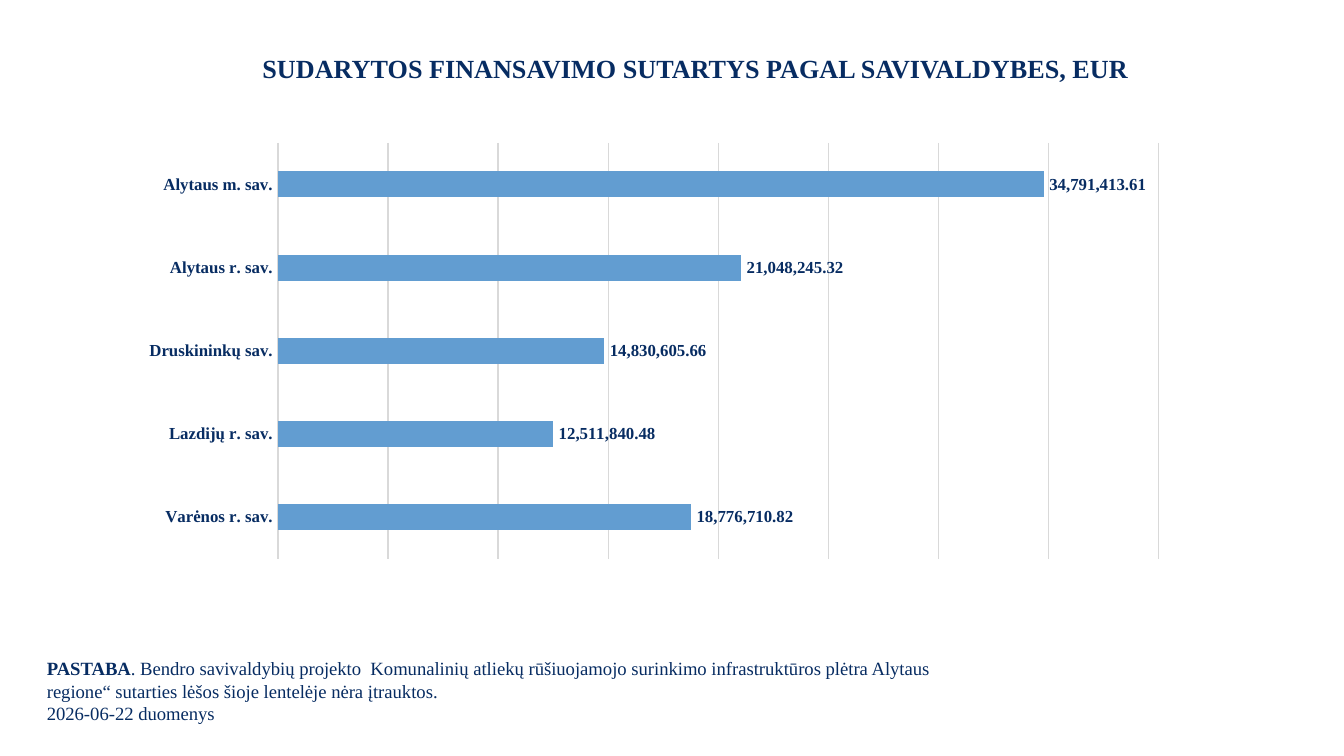
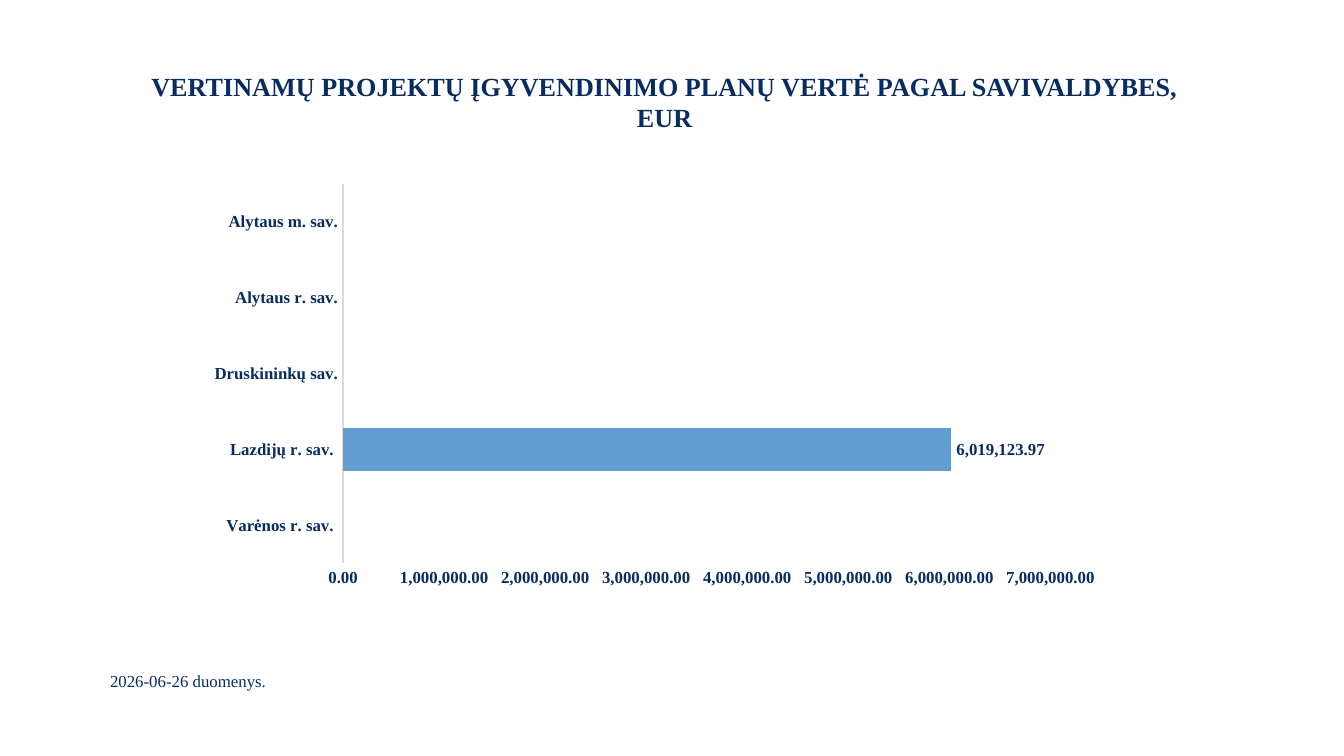
from dataclasses import dataclass
from typing import Optional

from lxml import etree
from pptx import Presentation
from pptx import util as u
from pptx.chart import data as cd
from pptx.dml.color import RGBColor
from pptx.enum import chart as ch
from pptx.enum import text as tx
from pptx.oxml.ns import qn


@dataclass(frozen=True)
class Theme:
    ink: RGBColor = RGBColor(0x07, 0x2C, 0x62)
    bar: RGBColor = RGBColor(0x62, 0x9D, 0xD1)
    grid: RGBColor = RGBColor(0xD9, 0xD9, 0xD9)
    face: str = "Times New Roman"
    head: int = 14
    note: int = 10
    small: int = 9
    line: float = 0.75
    form: str = "#,##0.00"


@dataclass(frozen=True)
class Box:
    left: float
    top: float
    width: float
    height: float

    def spots(self) -> tuple:
        return tuple(u.Inches(v) for v in (self.left, self.top, self.width, self.height))


@dataclass(frozen=True)
class Run:
    text: str
    bold: bool = False


@dataclass(frozen=True)
class Bars:
    box: Box
    towns: tuple
    vals: tuple
    top: int
    step: int
    gap: int
    scale: bool  # True: value labels; False: grid lines only
    plot: Optional[Box] = None  # percent of the chart's size


@dataclass(frozen=True)
class Page:
    title: str
    head: Box
    notes: tuple
    foot: Box
    size: int
    bars: Bars


THEME = Theme()
NEAR = ("Druskininkų sav.", "Alytaus r. sav.", "Alytaus m. sav.")

PAGES = (
    Page(
        "SUDARYTOS FINANSAVIMO SUTARTYS PAGAL SAVIVALDYBES, EUR",
        Box(1.04, 0.34, 8.27, 0.34),
        (
            (Run("PASTABA", True),
             Run(". Bendro savivaldybių projekto  Komunalinių atliekų rūšiuojamojo "
                 "surinkimo infrastruktūros plėtra Alytaus regione“ sutarties lėšos "
                 "šioje lentelėje nėra įtrauktos.")),
            (Run("2026-06-22 duomenys"),),
        ),
        Box(0.25, 4.84, 7.25, 0.61),
        THEME.note,
        Bars(Box(0.79, 0.93, 8.35, 3.6),
             ("Varėnos r. sav.", "Lazdijų r. sav.") + NEAR,
             (18776710.82, 12511840.48, 14830605.66, 21048245.32, 34791413.61),
             40_000_000, 5_000_000, 219, False, Box(15.3, 3.7, 78.5, 86)),
    ),
    Page(
        "VERTINAMŲ PROJEKTŲ ĮGYVENDINIMO PLANŲ VERTĖ PAGAL SAVIVALDYBES, EUR",
        Box(0.96, 0.47, 7.97, 0.57),
        ((Run("2026-06-26 duomenys."),),),
        Box(0.72, 4.94, 2.18, 0.5),
        THEME.small,
        Bars(Box(1.46, 1.31, 6.82, 3.13),
             ("Varėnos r. sav. ", "Lazdijų r. sav. ") + NEAR,
             (None, 6019123.97, None, None, None),
             7_000_000, 1_000_000, 75, True),
    ),
)


def set_font(font, size: int, bold: bool) -> None:
    font.name = THEME.face
    font.size = u.Pt(size)
    font.bold = bold
    font.color.rgb = THEME.ink


def write(frame, paras: tuple, size: int, align=tx.PP_ALIGN.LEFT) -> None:
    frame.word_wrap = True
    frame.auto_size = tx.MSO_AUTO_SIZE.SHAPE_TO_FIT_TEXT
    frame.vertical_anchor = tx.MSO_ANCHOR.TOP
    for i, runs in enumerate(paras):
        para = frame.add_paragraph() if i else frame.paragraphs[0]
        para.alignment = align
        for item in runs:
            run = para.add_run()
            run.text = item.text
            set_font(run.font, size, item.bold)


def add_title(slide, page: Page) -> None:
    title = slide.shapes.title
    title.left, title.top, title.width, title.height = page.head.spots()
    write(title.text_frame, ((Run(page.title, True),),), THEME.head, tx.PP_ALIGN.CENTER)


def place_plot(chart, plot: Box) -> None:
    """Fix the inner plot area, given in percent of the chart."""
    area = chart.element.find(".//" + qn("c:plotArea"))
    for old in area.findall(qn("c:layout")):
        area.remove(old)
    layout = etree.Element(qn("c:layout"))
    area.insert(0, layout)
    manual = etree.SubElement(layout, qn("c:manualLayout"))
    rules = {"layoutTarget": "inner", "xMode": "edge", "yMode": "edge",
             "x": plot.left / 100, "y": plot.top / 100,
             "w": plot.width / 100, "h": plot.height / 100}
    for tag, val in rules.items():
        etree.SubElement(manual, qn("c:" + tag)).set("val", str(val))


def grid_line(line) -> None:
    line.color.rgb = THEME.grid
    line.width = u.Pt(THEME.line)


def style_axes(chart, bars: Bars) -> None:
    towns, euros = chart.category_axis, chart.value_axis
    for axis in (towns, euros):
        axis.major_tick_mark = axis.minor_tick_mark = ch.XL_TICK_MARK.NONE
        set_font(axis.tick_labels.font, THEME.small, True)
    towns.has_major_gridlines = False
    grid_line(towns.format.line)

    euros.minimum_scale, euros.maximum_scale = 0, bars.top
    euros.major_unit = bars.step
    euros.tick_labels.number_format = THEME.form
    euros.tick_labels.number_format_is_linked = False
    euros.format.line.fill.background()
    euros.visible = bars.scale
    euros.has_major_gridlines = not bars.scale
    if not bars.scale:
        grid_line(euros.major_gridlines.format.line)


def add_bars(slide, bars: Bars) -> None:
    data = cd.CategoryChartData(number_format=THEME.form)
    data.categories = bars.towns
    data.add_series("Series 1", bars.vals)
    chart = slide.shapes.add_chart(
        ch.XL_CHART_TYPE.BAR_CLUSTERED, *bars.box.spots(), data).chart
    chart.has_title = chart.has_legend = False
    set_font(chart.font, THEME.note, True)
    style_axes(chart, bars)

    plot = chart.plots[0]
    plot.gap_width = bars.gap
    plot.vary_by_categories = False
    series = plot.series[0]
    fill = series.format.fill
    fill.solid()
    fill.fore_color.rgb = THEME.bar

    labels = series.data_labels
    labels.show_value = True
    labels.position = ch.XL_LABEL_POSITION.OUTSIDE_END
    labels.number_format = THEME.form
    labels.number_format_is_linked = False
    set_font(labels.font, THEME.small, True)
    if bars.plot:
        place_plot(chart, bars.plot)


def main() -> None:
    deck = Presentation()
    deck.slide_width = u.Inches(10)
    deck.slide_height = deck.slide_width * 9 // 16
    layout = deck.slide_layouts.get_by_name("Title Only")
    for page in PAGES:
        slide = deck.slides.add_slide(layout)
        add_title(slide, page)
        note = slide.shapes.add_textbox(*page.foot.spots())
        write(note.text_frame, page.notes, page.size)
        add_bars(slide, page.bars)
    deck.save("out.pptx")


if __name__ == "__main__":
    main()
